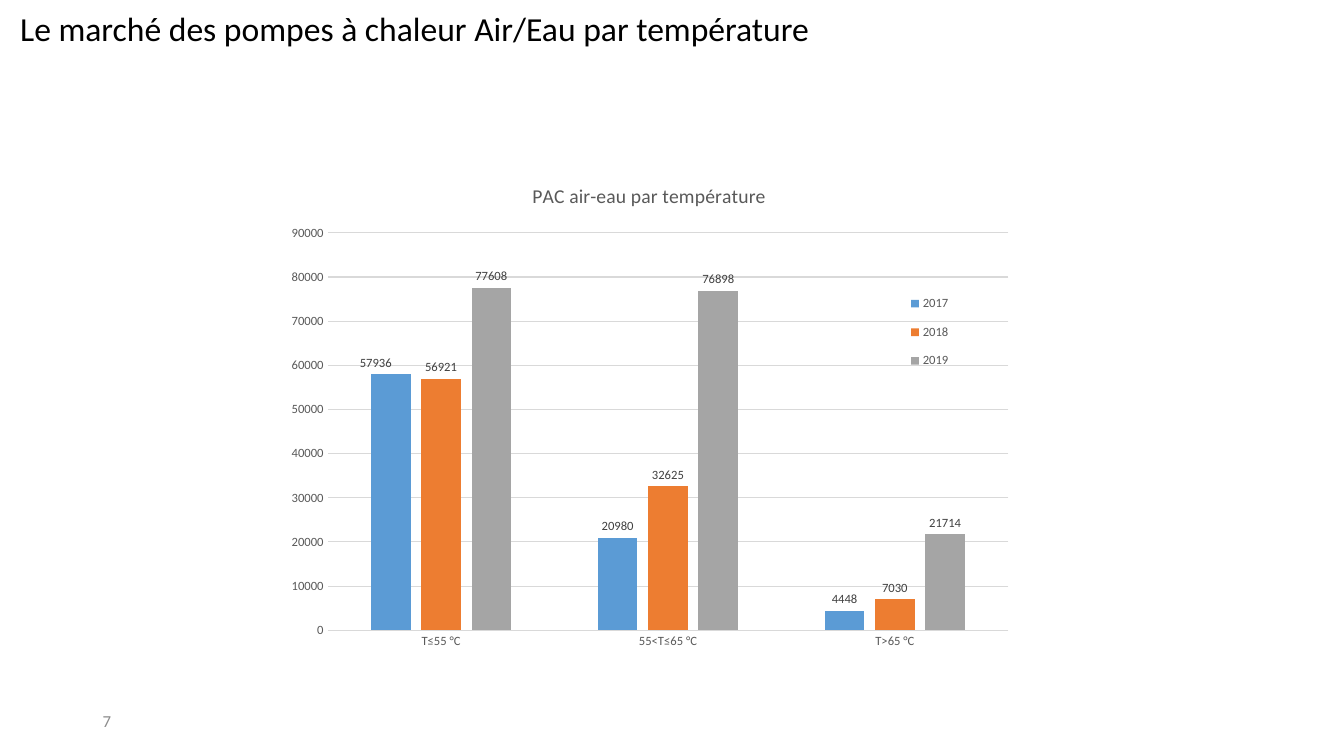
from lxml import etree
from pptx import Presentation
from pptx.chart.data import CategoryChartData
from pptx.dml.color import RGBColor
from pptx.enum.chart import (XL_CHART_TYPE as ChartType, XL_LABEL_POSITION as LabelPosition,
                             XL_LEGEND_POSITION as LegendPosition, XL_TICK_MARK as TickMark)
from pptx.enum.text import MSO_ANCHOR as Anchor, MSO_AUTO_SIZE as AutoSize, PP_ALIGN as Align
from pptx.oxml.ns import qn
from pptx.util import Inches, Pt

COLORS = {"title": "000000", "number": "8C8C8C", "axis": "595959", "label": "404040",
          "grid": "D9D9D9", "2017": "5B9BD5", "2018": "ED7D31", "2019": "A5A5A5"}
CATEGORIES = ["T≤55 °C", "55<T≤65 °C", "T>65 °C"]
SALES = {"2017": [57936, 20980, 4448],
         "2018": [56921, 32625, 7030],
         "2019": [77608, 76898, 21714]}


def set_attributes(target, values):
    for name, value in values.items():
        setattr(target, name, value)


def set_layout(parent, index, **values):
    """Give a chart part a manual layout, in fractions of the chart."""
    for old in parent.findall(qn("c:layout")):
        parent.remove(old)
    layout = etree.Element(qn("c:layout"))
    manual = etree.SubElement(layout, qn("c:manualLayout"))
    for name, value in values.items():
        etree.SubElement(manual, qn(f"c:{name}")).set("val", str(value))
    parent.insert(index, layout)


class SlideBuilder:
    font_name = "Calibri"

    def __init__(self, presentation):
        self.slide = presentation.slides.add_slide(presentation.slide_layouts[5])

    def style_font(self, font, size, color):
        set_attributes(font, {"name": self.font_name, "size": Pt(size), "bold": False})
        font.color.rgb = RGBColor.from_string(COLORS[color])

    def style_line(self, line):
        line.width = Pt(0.75)
        line.color.rgb = RGBColor.from_string(COLORS["grid"])

    def fill_text(self, shape, text, box, size, color, anchor):
        left, top, width, height = map(Inches, box)
        set_attributes(shape, {"left": left, "top": top, "width": width, "height": height})
        frame = shape.text_frame
        set_attributes(frame, {"word_wrap": True, "vertical_anchor": anchor,
                               "auto_size": AutoSize.NONE})
        paragraph = frame.paragraphs[0]
        paragraph.alignment = Align.LEFT
        run = paragraph.add_run()
        run.text = text
        self.style_font(run.font, size, color)

    def title(self, text, box):
        self.fill_text(self.slide.shapes.title, text, box, 24, "title", Anchor.TOP)

    def slide_number(self, text, box):
        shape = self.slide.shapes.add_textbox(0, 0, 0, 0)
        self.fill_text(shape, text, box, 12, "number", Anchor.MIDDLE)

    def column_chart(self, title, box):
        data = CategoryChartData()
        data.categories = CATEGORIES
        for year, values in SALES.items():
            data.add_series(year, values)
        chart = self.slide.shapes.add_chart(
            ChartType.COLUMN_CLUSTERED, *map(Inches, box), data).chart
        self.style_font(chart.font, 10, "title")
        plot = chart.plots[0]
        set_attributes(plot, {"gap_width": 219, "overlap": -27, "vary_by_categories": False})
        set_layout(chart._chartSpace.chart.plotArea, 0, layoutTarget="inner", xMode="edge",
                   yMode="edge", x=0.07, y=0.14, w=0.91, h=0.8)

        # Chart title
        frame = chart.chart_title.text_frame
        frame.text = title
        self.style_font(frame.paragraphs[0].runs[0].font, 14, "axis")
        chart.chart_title.include_in_layout = False

        self.format_axes(chart)
        self.format_legend(chart)
        for series in plot.series:
            self.format_series(series)

        # First label sits a little to the left of its column
        label = plot.series[0].points[0].data_label
        self.style_font(label.font, 9, "label")
        label.position = LabelPosition.OUTSIDE_END
        first_label = plot.series[0].data_labels._element.find(qn("c:dLbl"))
        set_layout(first_label, 1, x=-0.02, y=0)

    def format_axes(self, chart):
        for axis in (chart.category_axis, chart.value_axis):
            set_attributes(axis, {"major_tick_mark": TickMark.NONE,
                                  "minor_tick_mark": TickMark.NONE})
            self.style_font(axis.tick_labels.font, 9, "axis")
        self.style_line(chart.category_axis.format.line)
        value_axis = chart.value_axis
        set_attributes(value_axis, {"minimum_scale": 0, "maximum_scale": 90000,
                                    "major_unit": 10000, "has_major_gridlines": True})
        value_axis.format.line.fill.background()
        self.style_line(value_axis.major_gridlines.format.line)

    def format_legend(self, chart):
        chart.has_legend = True
        legend = chart.legend
        set_attributes(legend, {"position": LegendPosition.CORNER, "include_in_layout": True})
        self.style_font(legend.font, 9, "axis")
        set_layout(legend._element, 1, xMode="edge", yMode="edge", x=0.83, y=0.24, w=0.09, h=0.2)

    def format_series(self, series):
        series.format.fill.solid()
        series.format.fill.fore_color.rgb = RGBColor.from_string(COLORS[series.name])
        labels = series.data_labels
        set_attributes(labels, {"show_value": True, "position": LabelPosition.OUTSIDE_END})
        self.style_font(labels.font, 9, "label")


def main():
    presentation = Presentation()
    set_attributes(presentation, {"slide_width": Inches(13.33), "slide_height": Inches(7.5)})
    builder = SlideBuilder(presentation)
    builder.slide_number("7", (0.92, 6.95, 3, 0.4))
    builder.title("Le marché des pompes à chaleur Air/Eau par température", (0.1, 0.03, 8.55, 0.5))
    builder.column_chart("PAC air-eau par température", (2.73, 1.62, 7.42, 4.93))
    presentation.save("out.pptx")


if __name__ == "__main__":
    main()
